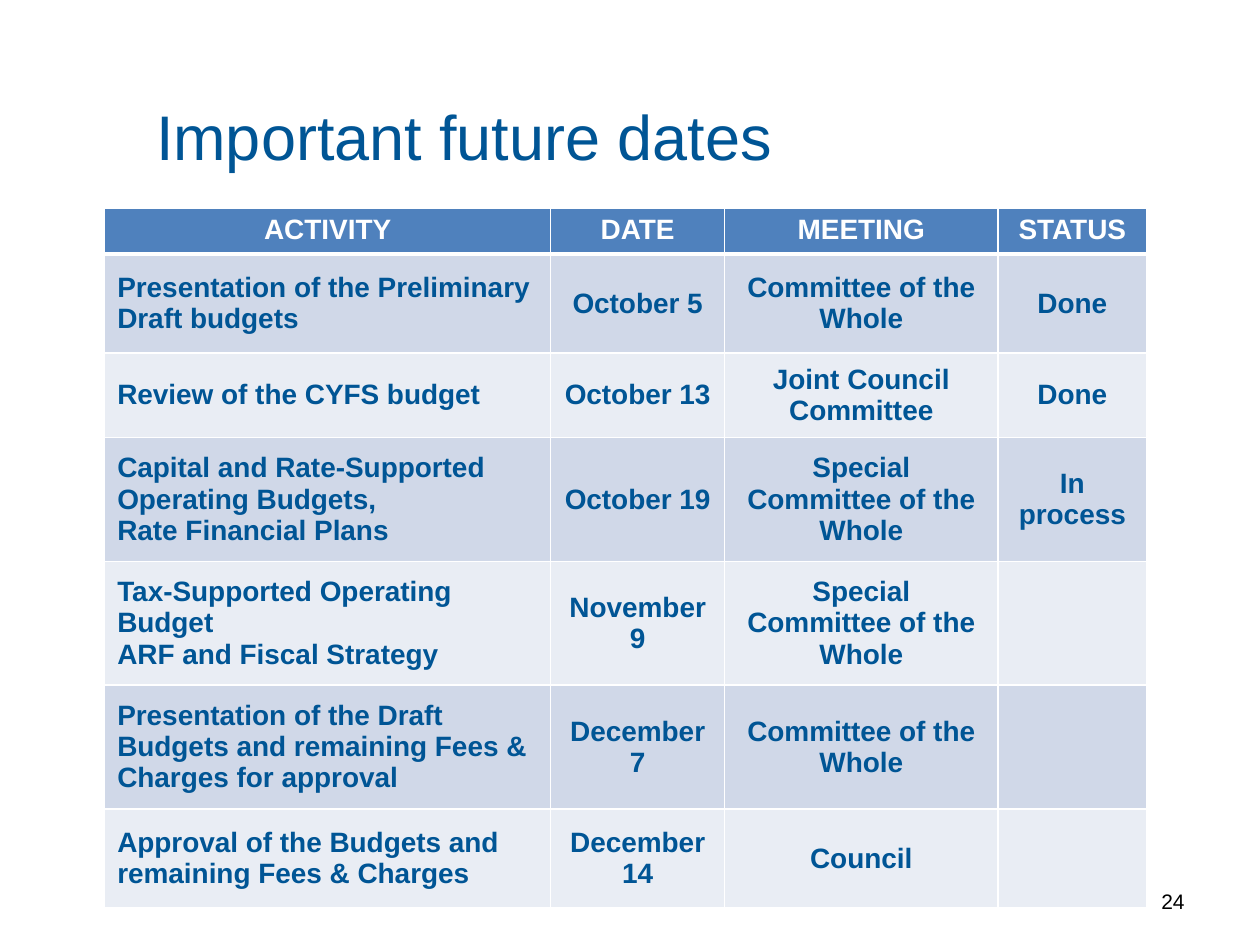
from lxml.etree import SubElement
from pptx import Presentation
from pptx.dml.color import RGBColor
from pptx.enum.text import MSO_ANCHOR, PP_ALIGN
from pptx.oxml import parse_xml
from pptx.oxml.ns import qn
from pptx.util import Pt

COLORS = {
    "blue": "005595",
    "header": "4F81BD",
    "dark_band": "D0D8E8",
    "light_band": "E9EDF4",
    "white": "FFFFFF",
    "black": "000000",
}
FONT = "Arial"
TITLE = "Important future dates"
PAGE_NUMBER = "24"
ROWS = [
    ("ACTIVITY", "DATE", "MEETING", "STATUS"),
    ("Presentation of the Preliminary Draft budgets", "October 5",
     "Committee of the Whole", "Done"),
    ("Review of the CYFS budget", "October 13", "Joint Council Committee", "Done"),
    ("Capital and Rate-Supported Operating Budgets,\nRate Financial Plans",
     "October 19", "Special Committee of the Whole", "In process"),
    ("Tax-Supported Operating Budget\nARF and Fiscal Strategy",
     "November 9", "Special Committee of the Whole", ""),
    ("Presentation of the Draft Budgets and remaining Fees & Charges for approval",
     "December 7", "Committee of the Whole", ""),
    ("Approval of the Budgets and remaining Fees & Charges", "December 14",
     "Council", ""),
]
COLUMN_WIDTHS = [254.9, 99.4, 156.2, 85]
ROW_HEIGHTS = [25.2, 56.6, 48.2, 70.8, 70.8, 70.8, 56.6]
SHADOW = (
    '<a:effectLst xmlns:a="http://schemas.openxmlformats.org/drawingml/2006/main">'
    '<a:outerShdw blurRad="38100" dist="38100" dir="2700000" algn="tl">'
    '<a:srgbClr val="000000"><a:alpha val="43000"/></a:srgbClr>'
    "</a:outerShdw></a:effectLst>"
)


def write(frame, text, size, color, align, bold=False):
    frame.text = text
    for paragraph in frame.paragraphs:
        paragraph.alignment = align
        for span in paragraph.runs:
            span.font.size = Pt(size)
            span.font.bold = bold
            span.font.color.rgb = RGBColor.from_string(COLORS[color])
            span.font.name = FONT


def add_text(page, place, text, size, color, align):
    box = page.shapes.add_textbox(*map(Pt, place))
    frame = box.text_frame
    frame.word_wrap = True
    frame.vertical_anchor = MSO_ANCHOR.MIDDLE
    write(frame, text, size, color, align)
    return box


def add_borders(cell, widths):
    properties = cell._tc.get_or_add_tcPr()
    for side, width in widths.items():
        line = SubElement(properties, qn(f"a:ln{side}"), w=str(Pt(width)))
        fill = SubElement(line, qn("a:solidFill"))
        SubElement(fill, qn("a:srgbClr"), val=COLORS["white"])


def add_schedule(page):
    frame = page.shapes.add_table(
        len(ROWS), len(COLUMN_WIDTHS), Pt(59.8), Pt(118.8),
        Pt(sum(COLUMN_WIDTHS)), Pt(sum(ROW_HEIGHTS)))
    table = frame.table
    for column, width in zip(table.columns, COLUMN_WIDTHS):
        column.width = Pt(width)
    for row, height in zip(table.rows, ROW_HEIGHTS):
        row.height = Pt(height)
    for row_index, texts in enumerate(ROWS):
        header = row_index == 0
        band = "header" if header else ("light_band", "dark_band")[row_index % 2]
        for column_index, text in enumerate(texts):
            cell = table.cell(row_index, column_index)
            add_borders(cell, {"L": 1, "R": 1, "T": 3 if row_index == 1 else 1,
                               "B": 3 if header else 1})
            cell.fill.solid()
            cell.fill.fore_color.rgb = RGBColor.from_string(COLORS[band])
            cell.vertical_anchor = MSO_ANCHOR.TOP if header else MSO_ANCHOR.MIDDLE
            left = column_index == 0 and not header
            write(cell.text_frame, text, 16, "white" if header else "blue",
                  PP_ALIGN.LEFT if left else PP_ALIGN.CENTER, bold=True)


def main():
    deck = Presentation()
    deck.slide_width, deck.slide_height = Pt(720), Pt(540)
    page = deck.slides.add_slide(deck.slide_layouts[6])
    add_text(page, (581.8, 500.4, 102.2, 28.8), PAGE_NUMBER, 12, "black",
             PP_ALIGN.RIGHT)
    add_schedule(page)
    title = add_text(page, (82.1, 32.4, 414, 90), TITLE, 36, "blue", PP_ALIGN.LEFT)
    span = title.text_frame.paragraphs[0].runs[0]
    span.font._element.find(qn("a:solidFill")).addnext(parse_xml(SHADOW))
    deck.save("out.pptx")


if __name__ == "__main__":
    main()
